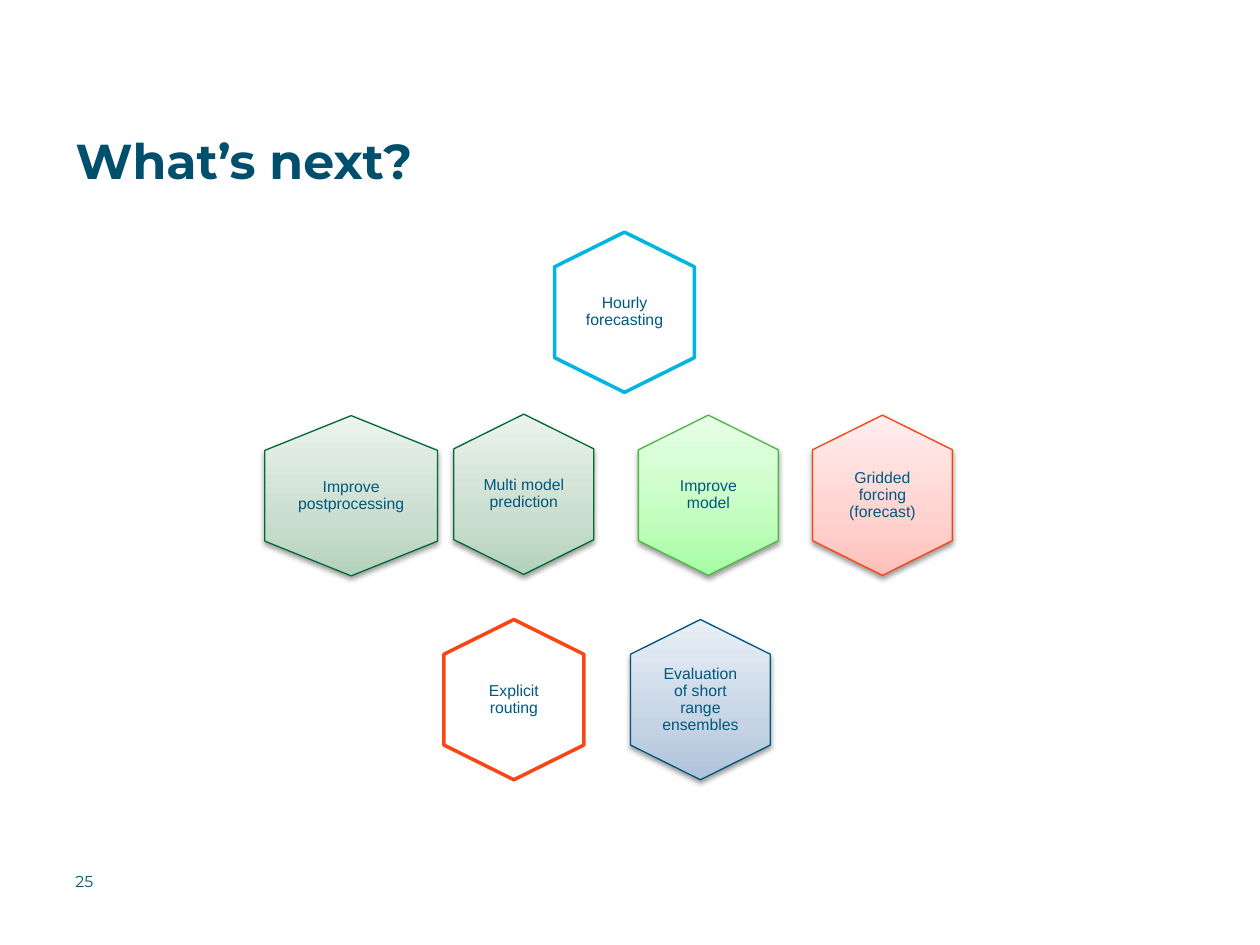
from dataclasses import dataclass

from pptx import Presentation
from pptx.dml.color import RGBColor
from pptx.enum.text import MSO_ANCHOR, MSO_AUTO_SIZE, PP_ALIGN
from pptx.oxml.xmlchemy import OxmlElement
from pptx.util import Cm, Pt

MIDDLE = MSO_ANCHOR.MIDDLE
NO_FIT = MSO_AUTO_SIZE.NONE
LEFT, CENTER = PP_ALIGN.LEFT, PP_ALIGN.CENTER
TITLE_ONLY = 5


@dataclass(frozen=True)
class Theme:
    title: str = "004F6C"
    text: str = "00587E"
    white: str = "FFFFFF"
    head_font: str = "Montserrat"
    body_font: str = "Arial"
    title_size: float = 28
    small_size: float = 9
    thick: float = 2
    thin: float = 0.75


THEME = Theme()

# Hexagon looks: line colour, then gradient colours from bottom to top
CYAN = ("00B5DF", ())
ORANGE = ("FA4616", ())
RED = ("FA4110", ("FFBFBA", "FFD2CF", "FFEEED"))
BLUE = ("00567B", ("ADC2DB", "C6D4E5", "E9EFF6"))
LIME = ("4DB744", ("A7FDA3", "C2FDBF", "E7FFE6"))
GREEN = ("016A37", ("B2D2BA", "CADECF", "EBF3ED"))
STOPS = (0, 35, 100)

# Hexagon measures in cm
WIDTH, WIDE, HEIGHT, CORNER = 2.82, 3.48, 3.23, 0.7

# Label, left, top, width, look
HEXAGONS = (
    ("Hourly forecasting", 11.18, 4.68, WIDTH, CYAN),
    ("Gridded forcing (forecast)", 16.38, 8.37, WIDTH, RED),
    ("Evaluation of short range ensembles", 12.71, 12.49, WIDTH, BLUE),
    ("Explicit routing", 8.95, 12.49, WIDTH, ORANGE),
    ("Improve model", 12.87, 8.37, WIDTH, LIME),
    ("Multi model prediction", 9.15, 8.35, WIDTH, GREEN),
    ("Improve postprocessing", 5.34, 8.38, WIDE, GREEN),
)


def set_all(obj, values):
    for name, value in values.items():
        setattr(obj, name, value)


def add_element(parent, tag, **attributes):
    child = OxmlElement(tag)
    for name, value in attributes.items():
        child.set(name, str(value))
    parent.append(child)
    return child


def write_text(sp, text, font, size, color, bold=False, align=LEFT, spacing=None):
    tf = sp.text_frame
    set_all(tf, {"word_wrap": True, "auto_size": NO_FIT, "vertical_anchor": MIDDLE})
    p = tf.paragraphs[0]
    set_all(p, {"alignment": align, "line_spacing": spacing})
    r = p.add_run()
    r.text = text
    set_all(r.font, {"name": font, "size": Pt(size), "bold": bold})
    r.font.color.rgb = RGBColor.from_string(color)


def fill_gradient(sp, colors):
    sp.fill.gradient()
    sp.fill.gradient_angle = 90
    stops = sp._element.spPr.find(".//{*}gsLst")
    for gs in list(stops):
        stops.remove(gs)
    for position, color in zip(STOPS, colors):
        gs = add_element(stops, "a:gs", pos=position * 1000)
        add_element(gs, "a:srgbClr", val=color)


def add_shadow(sp):
    effects = sp._element.spPr.find("{*}effectLst")
    shadow = add_element(effects, "a:outerShdw", blurRad=Pt(3.1), dist=Pt(1.6),
                         dir=90 * 60000, rotWithShape=0)
    color = add_element(shadow, "a:srgbClr", val="000000")
    add_element(color, "a:alpha", val=38000)


def add_hexagon(slide, label, left, top, width, look):
    line_color, gradient = look
    middle, right = left + width / 2, left + width
    upper, lower, bottom = top + CORNER, top + HEIGHT - CORNER, top + HEIGHT
    corners = ((right, upper), (right, lower), (middle, bottom),
               (left, lower), (left, upper))
    builder = slide.shapes.build_freeform(Cm(middle), Cm(top))
    builder.add_line_segments([(Cm(x), Cm(y)) for x, y in corners], close=True)
    sp = builder.convert_to_shape()

    # Outline, fill and shadow
    sp.line.color.rgb = RGBColor.from_string(line_color)
    sp.line.width = Pt(THEME.thin if gradient else THEME.thick)
    sp.shadow.inherit = False
    if gradient:
        fill_gradient(sp, gradient)
        add_shadow(sp)
    else:
        sp.fill.solid()
        sp.fill.fore_color.rgb = RGBColor.from_string(THEME.white)

    # Label
    set_all(sp.text_frame, {"margin_left": Cm(0.53), "margin_right": Cm(0.53),
                            "margin_top": Cm(0.61), "margin_bottom": Cm(0.61)})
    write_text(sp, label, THEME.body_font, THEME.small_size, THEME.text,
               align=CENTER, spacing=0.9)


def add_title(slide, text):
    sp = slide.shapes.title
    set_all(sp, {"left": Cm(1.27), "top": Cm(2.21),
                 "width": Cm(22.94), "height": Cm(2.24)})
    write_text(sp, text, THEME.head_font, THEME.title_size, THEME.title,
               bold=True, spacing=Pt(28))


def add_page_number(slide, number):
    sp = slide.shapes.add_textbox(Cm(1.27), Cm(17.25), Cm(1), Cm(1.02))
    set_all(sp.text_frame, {"margin_right": 0})
    write_text(sp, number, THEME.head_font, THEME.small_size, THEME.text)


def main():
    prs = Presentation()
    set_all(prs, {"slide_width": Cm(25.4), "slide_height": Cm(19.05)})
    slide = prs.slides.add_slide(prs.slide_layouts[TITLE_ONLY])
    add_title(slide, "What’s next?")
    add_page_number(slide, "25")
    for hexagon in HEXAGONS:
        add_hexagon(slide, *hexagon)
    prs.save("out.pptx")


if __name__ == "__main__":
    main()
